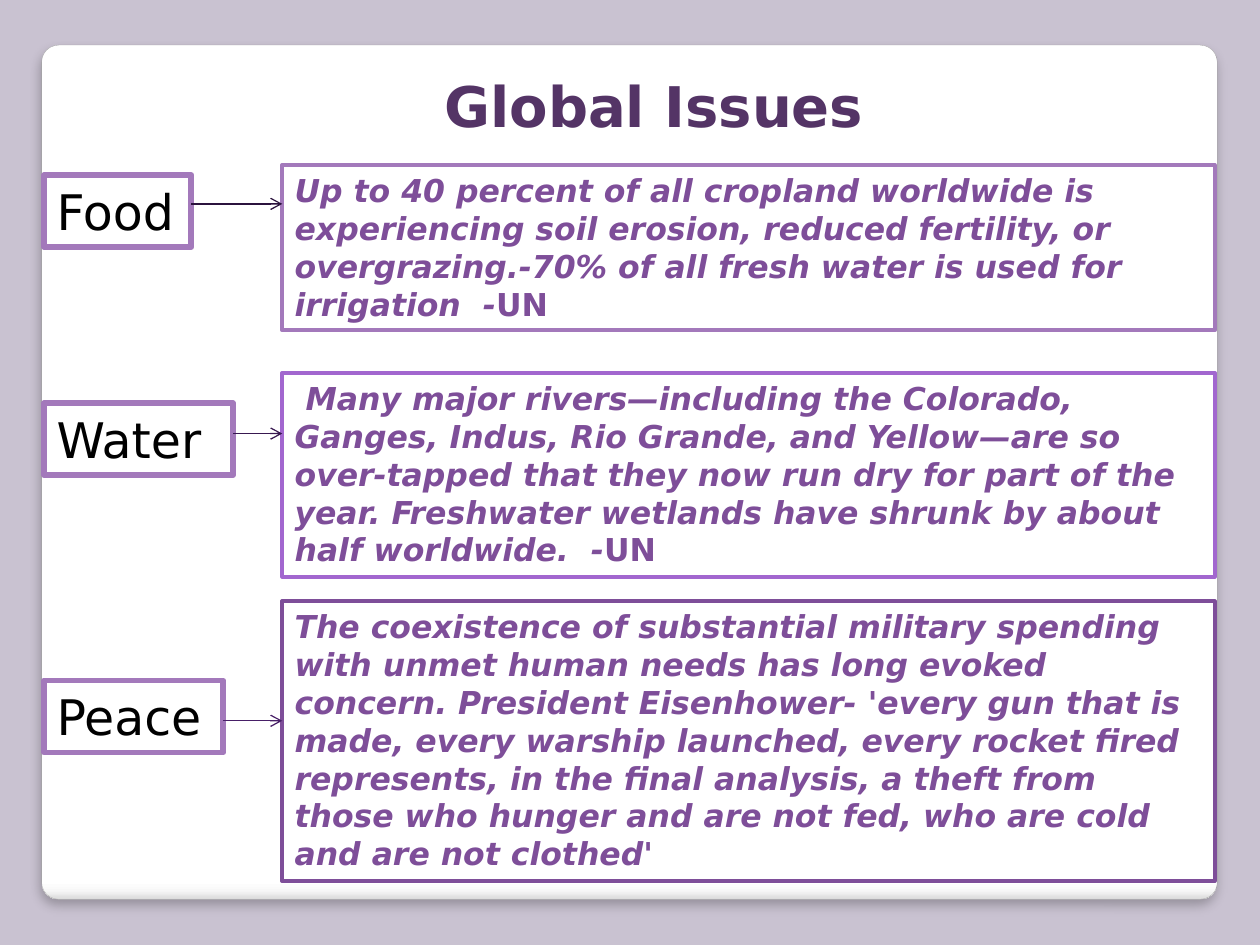
from dataclasses import dataclass

from lxml.etree import SubElement
from pptx import Presentation
from pptx.dml.color import RGBColor
from pptx.enum.shapes import MSO_CONNECTOR, MSO_SHAPE
from pptx.enum.text import MSO_ANCHOR, MSO_AUTO_SIZE, PP_ALIGN
from pptx.oxml.ns import qn
from pptx.util import Cm, Pt

FONT = "DejaVu Sans"
BACKGROUND = RGBColor(0xC9, 0xC2, 0xD1)
WHITE = RGBColor(0xFF, 0xFF, 0xFF)
BLACK = RGBColor(0x00, 0x00, 0x00)
PANEL_LINE = RGBColor(0xA4, 0xA4, 0xA4)
PANEL_SHADE = RGBColor(0xF7, 0xF7, 0xF7)
PANEL_EDGE = RGBColor(0xDA, 0xDA, 0xDA)
TITLE = RGBColor(0x54, 0x34, 0x66)
PURPLE = RGBColor(0x7E, 0x4E, 0x99)
LILAC = RGBColor(0xA3, 0x79, 0xBB)
VIOLET = RGBColor(0xA2, 0x67, 0xCF)
ARROW_FOOD = RGBColor(0x2B, 0x13, 0x3D)
ARROW_WATER = RGBColor(0x38, 0x18, 0x50)
ARROW_PEACE = RGBColor(0x48, 0x1F, 0x67)

LABEL_LEFT, LABEL_HEIGHT = 0.89, 1.45
DETAIL_LEFT, DETAIL_WIDTH = 5.69, 18.8

TITLE_FORMAT = {"size": Pt(32), "bold": True}
LABEL_FORMAT = {"size": Pt(28)}
DETAIL_FORMAT = {"size": Pt(18), "bold": True, "italic": True}
SOURCE_FORMAT = {**DETAIL_FORMAT, "italic": False}


@dataclass(frozen=True)
class Issue:
    name: str
    label_top: float
    label_width: float
    detail: str
    source: str
    detail_top: float
    detail_height: float
    outline: RGBColor
    arrow_y: float
    arrow_color: RGBColor


ISSUES = [
    Issue("Food", 3.53, 2.97,
          "Up to 40 percent of all cropland worldwide is experiencing soil erosion, "
          "reduced fertility, or overgrazing.-70% of all fresh water is used for "
          "irrigation  -", "UN", 3.33, 3.33, LILAC, 4.11, ARROW_FOOD),
    Issue("Water", 8.13, 3.81,
          " Many major rivers—including the Colorado, Ganges, Indus, Rio Grande, and "
          "Yellow—are so over-tapped that they now run dry for part of the year. "
          "Freshwater wetlands have shrunk by about half worldwide.  -",
          "UN", 7.52, 4.11, VIOLET, 8.74, ARROW_WATER),
    Issue("Peace", 13.72, 3.61,
          "The coexistence of substantial military spending with unmet human needs "
          "has long evoked concern. President Eisenhower- 'every gun that is made, "
          "every warship launched, every rocket fired represents, in the final "
          "analysis, a theft from those who hunger and are not fed, who are cold and "
          "are not clothed'", "", 12.12, 5.64, PURPLE, 14.53, ARROW_PEACE),
]


def add_run(p, text: str, color: RGBColor, formats: dict) -> None:
    r = p.add_run()
    r.text = text
    r.font.name = FONT
    r.font.color.rgb = color
    for name, value in formats.items():
        setattr(r.font, name, value)


def add_panel(s) -> None:
    sp = s.shapes.add_shape(MSO_SHAPE.ROUNDED_RECTANGLE,
                            Cm(0.84), Cm(0.91), Cm(23.7), Cm(17.22))
    sp.adjustments[0] = 0.02
    sp.line.color.rgb = PANEL_LINE
    sp.line.width = Pt(0.16)
    sp.fill.gradient()
    sp.fill.gradient_angle = 270
    stops = sp.element.spPr.find(qn("a:gradFill")).find(qn("a:gsLst"))
    for stop in list(stops):
        stops.remove(stop)
    for percent, color in ((0, WHITE), (98, WHITE), (99, PANEL_SHADE), (100, PANEL_EDGE)):
        stop = SubElement(stops, qn("a:gs"), pos=str(percent * 1000))
        SubElement(stop, qn("a:srgbClr"), val=str(color))
    sp.shadow.inherit = False
    effects = sp.element.spPr.find(qn("a:effectLst"))
    shadow = SubElement(effects, qn("a:outerShdw"), blurRad=str(Pt(6)),
                        dist=str(Pt(4)), dir="5400000", algn="t", rotWithShape="0")
    color = SubElement(shadow, qn("a:srgbClr"), val=str(BLACK))
    SubElement(color, qn("a:alpha"), val="25000")


def add_title(s, text: str) -> None:
    sp = s.shapes.add_textbox(Cm(8.71), Cm(1.32), Cm(9.17), Cm(1.63))
    tf = sp.text_frame
    tf.word_wrap = False
    tf.auto_size = MSO_AUTO_SIZE.SHAPE_TO_FIT_TEXT
    add_run(tf.paragraphs[0], text, TITLE, TITLE_FORMAT)


def add_box(s, left: float, top: float, width: float, height: float,
            outline: RGBColor, weight: float):
    sp = s.shapes.add_shape(MSO_SHAPE.RECTANGLE, Cm(left), Cm(top), Cm(width), Cm(height))
    sp.shadow.inherit = False
    sp.fill.background()
    sp.line.color.rgb = outline
    sp.line.width = Pt(weight)
    tf = sp.text_frame
    settings = {"word_wrap": True, "vertical_anchor": MSO_ANCHOR.TOP,
                "auto_size": MSO_AUTO_SIZE.SHAPE_TO_FIT_TEXT}
    for name, value in settings.items():
        setattr(tf, name, value)
    tf.paragraphs[0].alignment = PP_ALIGN.LEFT
    return sp


def add_detail(s, issue: Issue) -> None:
    sp = add_box(s, DETAIL_LEFT, issue.detail_top, DETAIL_WIDTH, issue.detail_height,
                 issue.outline, 2.25)
    p = sp.text_frame.paragraphs[0]
    add_run(p, issue.detail, PURPLE, DETAIL_FORMAT)
    if issue.source:
        add_run(p, issue.source, PURPLE, SOURCE_FORMAT)


def add_label(s, issue: Issue) -> None:
    sp = add_box(s, LABEL_LEFT, issue.label_top, issue.label_width, LABEL_HEIGHT,
                 LILAC, 3.35)
    sp.fill.solid()
    sp.fill.fore_color.rgb = WHITE
    add_run(sp.text_frame.paragraphs[0], issue.name, BLACK, LABEL_FORMAT)


def add_arrow(s, issue: Issue) -> None:
    y = Cm(issue.arrow_y)
    arrow = s.shapes.add_connector(MSO_CONNECTOR.STRAIGHT,
                                   Cm(LABEL_LEFT + issue.label_width), y,
                                   Cm(DETAIL_LEFT), y)
    arrow.line.color.rgb = issue.arrow_color
    arrow.line.width = Pt(0.75)
    SubElement(arrow.line._get_or_add_ln(), qn("a:tailEnd"), type="arrow")
    SubElement(arrow.element.spPr, qn("a:effectLst"))


def main() -> None:
    prs = Presentation()
    prs.slide_width, prs.slide_height = Cm(25.4), Cm(19.05)
    s = prs.slides.add_slide(prs.slide_layouts[6])
    s.background.fill.solid()
    s.background.fill.fore_color.rgb = BACKGROUND
    add_panel(s)
    add_title(s, "Global Issues")
    for draw in (add_detail, add_label, add_arrow):
        for issue in ISSUES:
            draw(s, issue)
    prs.save("out.pptx")


if __name__ == "__main__":
    main()
